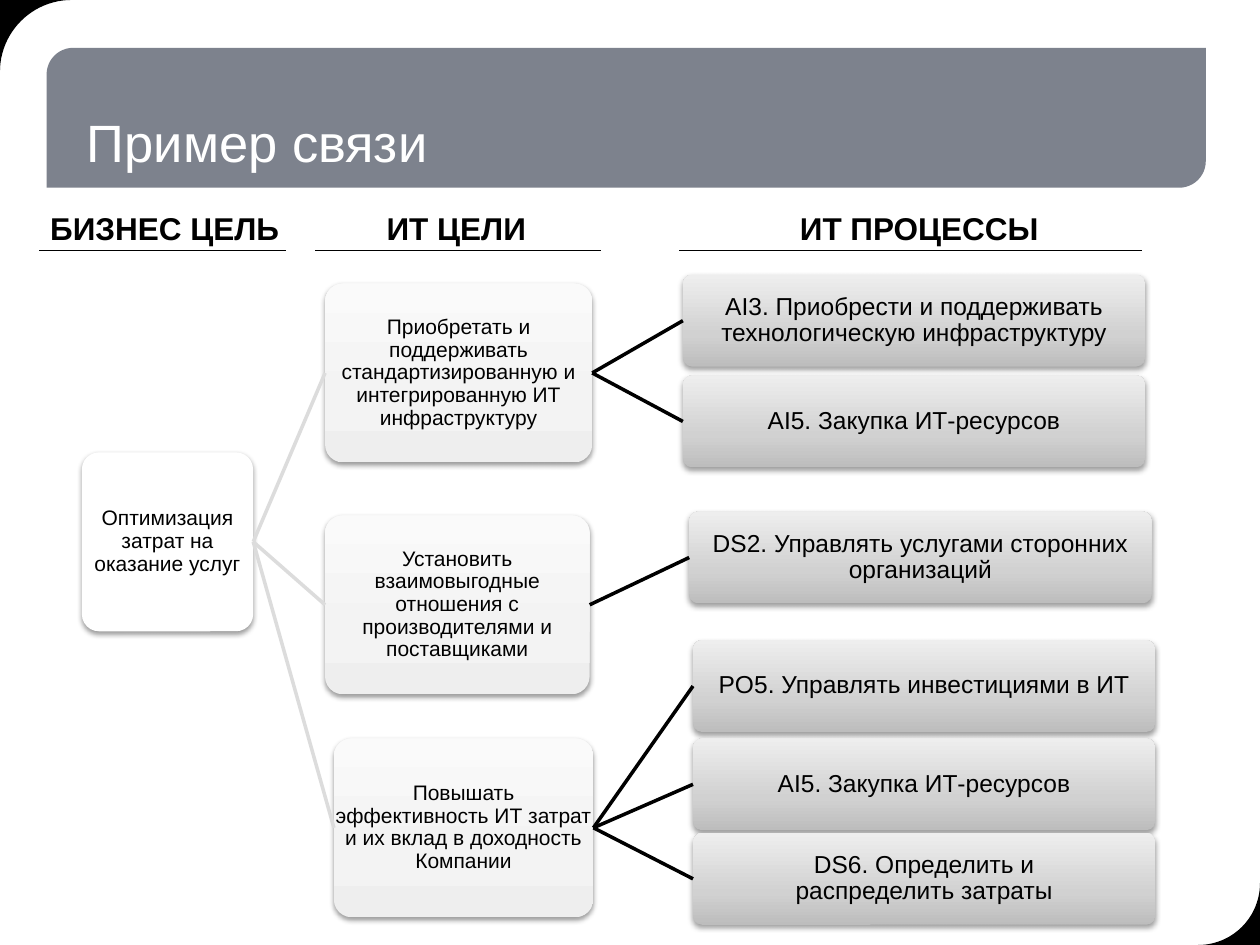
from copy import deepcopy
from dataclasses import dataclass
from math import cos, pi, sin

from lxml.etree import SubElement
from pptx import Presentation
from pptx.dml.color import RGBColor
from pptx.enum.shapes import MSO_CONNECTOR, MSO_SHAPE
from pptx.enum.text import MSO_ANCHOR, MSO_AUTO_SIZE, PP_ALIGN
from pptx.oxml import parse_xml
from pptx.oxml.ns import nsdecls, qn
from pptx.util import Inches, Pt

WIDTH, HEIGHT = 10, 7.5
BLACK, WHITE, PALE = "000000", "FFFFFF", "DCDCDC"


@dataclass(frozen=True)
class Level:
    """Look of one column of the tree; stops run from bottom to top."""
    height: float
    size: int
    stops: tuple[str, ...]


@dataclass(frozen=True)
class Node:
    text: str
    left: float
    top: float
    width: float
    children: tuple["Node", ...] = ()


@dataclass(frozen=True)
class Heading:
    text: str
    left: float
    width: float
    line_start: float
    line_end: float


LEVELS = (
    Level(1.42, 12, (WHITE,)),
    Level(1.42, 12, ("EEEEEE", "F3F3F3", "FAFAFA")),
    Level(0.73, 14, ("BDBDBD", "D1D1D1", "EEEEEE")),
)
LINK_COLORS = (PALE, BLACK)
PROCESS_WIDTH = 3.67

TREE = Node("Оптимизация затрат на оказание услуг", 0.65, 3.59, 1.36, (
    Node("Приобретать и поддерживать стандартизированную и интегрированную ИТ инфраструктуру",
         2.58, 2.25, 2.12, (
             Node("AI3. Приобрести и поддерживать технологическую инфраструктуру",
                  5.42, 2.18, PROCESS_WIDTH),
             Node("AI5. Закупка ИТ-ресурсов", 5.42, 2.98, PROCESS_WIDTH))),
    Node("Установить взаимовыгодные отношения с производителями и поставщиками",
         2.58, 4.09, 2.1, (
             Node("DS2. Управлять услугами сторонних организаций",
                  5.47, 4.06, PROCESS_WIDTH),)),
    Node("Повышать\nэффективность ИТ затрат\nи их вклад в доходность\nКомпании",
         2.65, 5.86, 2.06, (
             Node("PO5. Управлять инвестициями в ИТ", 5.5, 5.08, PROCESS_WIDTH),
             Node("AI5. Закупка ИТ-ресурсов", 5.5, 5.86, PROCESS_WIDTH),
             Node("DS6. Определить и\nраспределить затраты", 5.5, 6.61, PROCESS_WIDTH))),
))

HEADINGS = (
    Heading("БИЗНЕС ЦЕЛЬ", 0.3, 2.04, 0.31, 2.27),
    Heading("ИТ ЦЕЛИ", 2.97, 1.32, 2.5, 4.77),
    Heading("ИТ ПРОЦЕССЫ", 6.25, 2.12, 5.39, 9.06),
)


def color(value: str) -> RGBColor:
    return RGBColor.from_string(value)


def write(box, text: str, *, size: int, ink: str = BLACK, bold: bool = False,
          align=PP_ALIGN.LEFT, anchor=MSO_ANCHOR.TOP, spacing: float = 1.0,
          inset: float | None = None, wrap: bool = True) -> None:
    frame = box.text_frame
    frame.word_wrap = wrap
    frame.vertical_anchor = anchor
    if inset is not None:
        frame.margin_left = frame.margin_right = Inches(inset)
        frame.margin_top = frame.margin_bottom = Inches(inset)
    para = frame.paragraphs[0]
    para.text = text
    para.alignment = align
    para.line_spacing = spacing
    for span in para.runs:
        span.font.name = "Arial"
        span.font.size = Pt(size)
        span.font.bold = bold
        span.font.color.rgb = color(ink)
    # Line breaks take the format of the text around them
    for line_break in box.element.iter(qn("a:br")):
        line_break.append(deepcopy(box.element.find(".//" + qn("a:rPr"))))


def paint(shape, fill: str):
    shape.shadow.inherit = False
    shape.fill.solid()
    shape.fill.fore_color.rgb = color(fill)
    shape.line.fill.background()
    return shape


def add_panel(page, kind, left: float, top: float, width: float, height: float, fill: str):
    return paint(page.shapes.add_shape(
        kind, Inches(left), Inches(top), Inches(width), Inches(height)), fill)


def add_corner(page, x: float, y: float, direction: int, radius: float = 0.57) -> None:
    """Black corner outside a quarter circle; direction 1 faces right and down."""
    center_x, center_y = x + direction * radius, y + direction * radius
    arc = [(Inches(center_x - direction * radius * cos(step * pi / 48)),
            Inches(center_y - direction * radius * sin(step * pi / 48)))
           for step in range(25)]
    builder = page.shapes.build_freeform(Inches(x), Inches(y))
    builder.add_line_segments(arc, close=True)
    paint(builder.convert_to_shape(), BLACK)


def add_line(page, start: tuple[float, float], end: tuple[float, float],
             ink: str, weight: float):
    line = page.shapes.add_connector(
        MSO_CONNECTOR.STRAIGHT, *(Inches(value) for value in start + end))
    line.line.color.rgb = color(ink)
    line.line.width = Pt(weight)
    SubElement(line.element.spPr, qn("a:effectLst"))
    return line


def add_gradient(shape, stops: tuple[str, ...]) -> None:
    marks = "".join(
        f'<a:gs pos="{position}"><a:srgbClr val="{stop}"/></a:gs>'
        for position, stop in zip((0, 35000, 100000), stops))
    gradient = parse_xml(
        f'<a:gradFill {nsdecls("a")} rotWithShape="1"><a:gsLst>{marks}</a:gsLst>'
        '<a:lin ang="16200000" scaled="0"/></a:gradFill>')
    solid = shape.element.spPr.find(qn("a:solidFill"))
    solid.getparent().replace(solid, gradient)


def add_shadow(shape) -> None:
    shape.element.spPr.find(qn("a:effectLst")).append(parse_xml(
        f'<a:outerShdw {nsdecls("a")} blurRad="{Pt(3.1)}" dist="{Pt(1.6)}" dir="5400000" '
        'rotWithShape="0"><a:srgbClr val="000000"><a:alpha val="38000"/></a:srgbClr>'
        '</a:outerShdw>'))


def add_node(page, node: Node, depth: int = 0):
    """Draw a node with its branches and links, and return its box."""
    level = LEVELS[depth]
    box = add_panel(page, MSO_SHAPE.ROUNDED_RECTANGLE, node.left, node.top,
                    node.width, level.height, level.stops[0])
    box.adjustments[0] = 0.1
    if len(level.stops) > 1:
        add_gradient(box, level.stops)
    add_shadow(box)
    write(box, node.text, size=level.size, align=PP_ALIGN.CENTER,
          anchor=MSO_ANCHOR.MIDDLE, spacing=0.9, inset=0.01, wrap="\n" not in node.text)
    for child in node.children:
        child_box = add_node(page, child, depth + 1)
        link = add_line(page, (0, 0), (1, 1), LINK_COLORS[depth], 2)
        link.begin_connect(box, 3)
        link.end_connect(child_box, 1)
    return box


def add_heading(page, heading: Heading) -> None:
    box = page.shapes.add_textbox(
        Inches(heading.left), Inches(1.61), Inches(heading.width), Inches(0.4))
    write(box, heading.text, size=18, bold=True, wrap=False)
    box.text_frame.auto_size = MSO_AUTO_SIZE.SHAPE_TO_FIT_TEXT
    add_line(page, (heading.line_start, 1.99), (heading.line_end, 1.99), BLACK, 0.75)


def main() -> None:
    deck = Presentation()
    deck.slide_width, deck.slide_height = Inches(WIDTH), Inches(HEIGHT)
    page = deck.slides.add_slide(deck.slide_layouts[5])
    page.background.fill.solid()
    page.background.fill.fore_color.rgb = color("C0C0C0")

    # Frame: white sheet, title band and two black corners
    add_panel(page, MSO_SHAPE.RECTANGLE, 0, 0, WIDTH, HEIGHT, WHITE)
    band = add_panel(page, MSO_SHAPE.ROUND_2_DIAG_RECTANGLE, 0.37, 0.38, 9.2, 1.11, "7D828D")
    band.adjustments[0] = 0.19
    add_corner(page, 0, 0, 1)
    add_corner(page, WIDTH, HEIGHT, -1, radius=0.49)

    # Title, raised above the band
    title = page.shapes.title
    title.left, title.top = Inches(0.69), Inches(0.97)
    title.width, title.height = Inches(8.48), Inches(0.4)
    write(title, "Пример связи", size=30, ink=WHITE, anchor=MSO_ANCHOR.BOTTOM,
          spacing=0.8, inset=0)
    title.element.getparent().append(title.element)

    # Tree of goals and processes
    add_node(page, TREE)

    # Column headings with underlines
    for heading in HEADINGS:
        add_heading(page, heading)

    deck.save("out.pptx")


if __name__ == "__main__":
    main()
